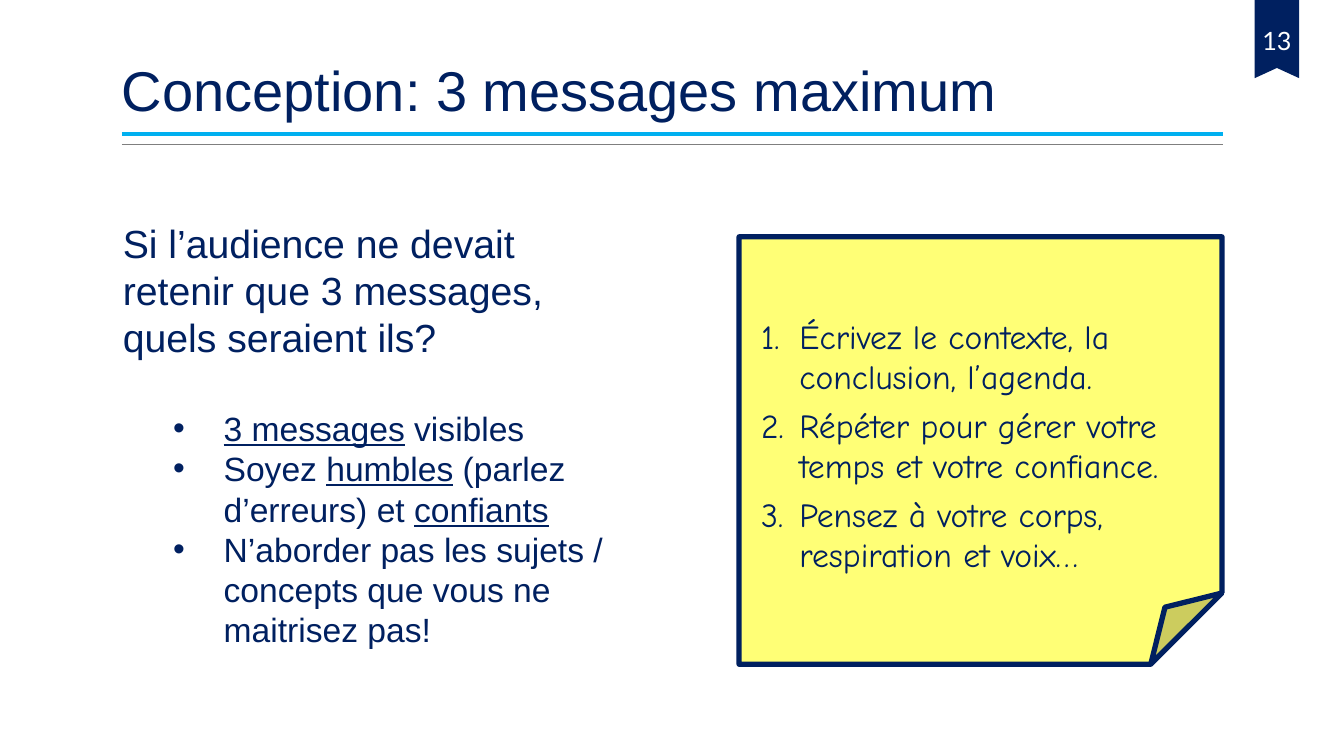
from lxml import etree
from pptx import Presentation
from pptx.dml.color import RGBColor
from pptx.enum import shapes, text
from pptx.oxml import ns
from pptx.util import Inches, Pt

NAVY = RGBColor(0x00, 0x20, 0x60)
SKY = RGBColor(0x00, 0xB0, 0xF0)
GREY = RGBColor(0x7F, 0x7F, 0x7F)
YELLOW = RGBColor(0xFF, 0xFF, 0x76)
WHITE = RGBColor(0xFF, 0xFF, 0xFF)


def add_text(para, words, font, size, color=NAVY, underline=False):
    span = para.add_run()
    span.text = words
    span.font.color.rgb = color
    style = {"name": font, "size": Pt(size), "underline": underline}
    for key, value in style.items():
        setattr(span.font, key, value)


def add_marker(para, tag, margin, indent, **attributes):
    props = para._p.get_or_add_pPr()
    props.set("marL", str(Inches(margin)))
    props.set("indent", str(Inches(indent)))
    if tag == "a:buChar":
        etree.SubElement(props, ns.qn("a:buFont")).set("typeface", "Arial")
    etree.SubElement(props, ns.qn(tag), attributes)


deck = Presentation()
deck.slide_width, deck.slide_height = Inches(13.33), Inches(7.5)
page = deck.slides.add_slide(deck.slide_layouts[6])

# Double rule under the title
for y, color, weight in [(1.33, SKY, 3), (1.43, GREY, 0.75)]:
    rule = page.shapes.add_connector(
        shapes.MSO_CONNECTOR.STRAIGHT, Inches(1.21), Inches(y), Inches(12.13), Inches(y))
    rule.line.color.rgb = color
    rule.line.width = Pt(weight)
    etree.SubElement(rule._element.spPr, ns.qn("a:effectLst"))

# Title
title = page.shapes.add_textbox(Inches(1.21), Inches(0.08), Inches(10.92), Inches(1.2))
frame = title.text_frame
frame.word_wrap = True
frame.vertical_anchor = text.MSO_ANCHOR.BOTTOM
frame.margin_left = frame.margin_right = 0
frame.paragraphs[0].line_spacing = 0.9
add_text(frame.paragraphs[0], "Conception: 3 messages maximum", "Arial", 40)

# Page number on its ribbon
ribbon = page.shapes.add_shape(
    shapes.MSO_SHAPE.NOTCHED_RIGHT_ARROW, Inches(12.15), Inches(0.04), Inches(1.03), Inches(0.44))
ribbon.rotation = 270
ribbon.adjustments[0], ribbon.adjustments[1] = 1, 0.23
ribbon.shadow.inherit = False
ribbon.fill.solid()
ribbon.fill.fore_color.rgb = NAVY
ribbon.line.fill.background()

number = page.shapes.add_textbox(Inches(12.35), Inches(0.2), Inches(0.63), Inches(0.4))
number.text_frame.word_wrap = True
para = number.text_frame.paragraphs[0]
para.alignment = text.PP_ALIGN.CENTER
add_text(para, "13", "Lato", 18, WHITE)

# Question and advice; each piece is (words, underlined)
advice = [
    [("3 messages", True), (" visibles", False)],
    [("Soyez ", False), ("humbles", True), (" (parlez d’erreurs) et ", False), ("confiants", True)],
    [("N’aborder pas les sujets / concepts que vous ne maitrisez pas!", False)],
]
body = page.shapes.add_textbox(Inches(1.12), Inches(2.13), Inches(5.16), Inches(4.41))
frame = body.text_frame
frame.word_wrap = True
question = frame.paragraphs[0]
question.line_spacing = question.space_after = Pt(33.6)
add_text(question, "Si l’audience ne devait retenir que 3 messages, quels seraient ils?", "Arial", 28)
for pieces in advice:
    para = frame.add_paragraph()
    para.level = 1
    para.line_spacing = Pt(28.8)
    add_marker(para, "a:buChar", 1, -0.5, char="•")
    for words, underlined in pieces:
        add_text(para, words, "Arial", 24, underline=underlined)

# Sticky note with the three messages
messages = [
    "Écrivez le contexte, la conclusion, l’agenda.",
    "Répéter pour gérer votre temps et votre confiance.",
    "Pensez à votre corps, respiration et voix…",
]
note = page.shapes.add_shape(
    shapes.MSO_SHAPE.FOLDED_CORNER, Inches(7.33), Inches(2.35), Inches(4.79), Inches(4.24))
note.shadow.inherit = False
note.fill.solid()
note.fill.fore_color.rgb = YELLOW
note.line.color.rgb = NAVY
note.line.width = Pt(3.78)
frame = note.text_frame
frame.word_wrap = True
frame.vertical_anchor = text.MSO_ANCHOR.MIDDLE
frame.margin_top = Inches(0.65)
for index, message in enumerate(messages):
    para = frame.add_paragraph() if index else frame.paragraphs[0]
    para.alignment = text.PP_ALIGN.LEFT
    para.line_spacing = Pt(28.8)
    para.space_after = Pt(6)
    add_marker(para, "a:buAutoNum", 0.5, -0.38, type="arabicPeriod")
    add_text(para, message, "Comic Neue", 24)

deck.save("out.pptx")
